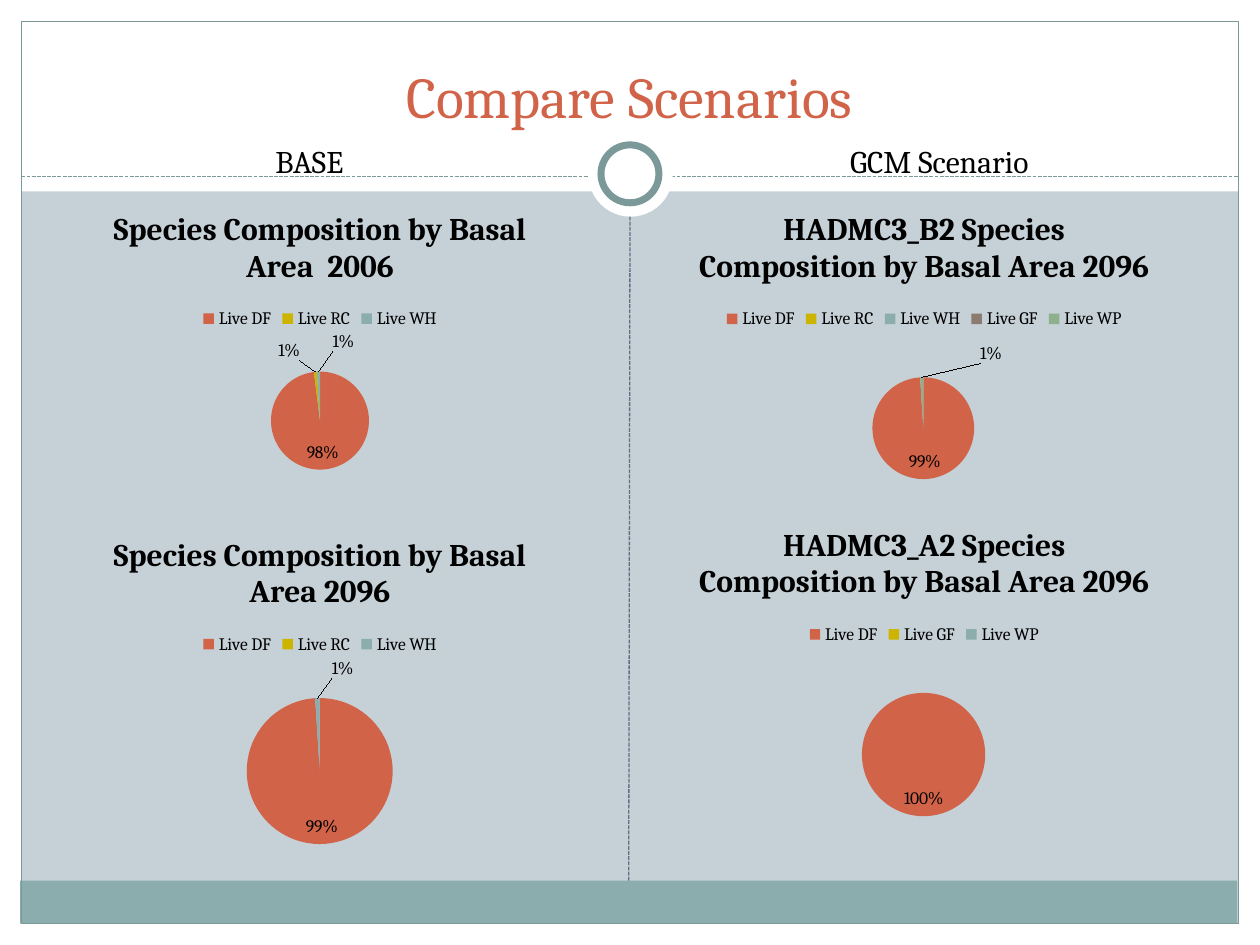
from lxml import etree
from pptx import Presentation
from pptx.chart.data import CategoryChartData
from pptx.dml.color import RGBColor
from pptx.enum.chart import XL_CHART_TYPE, XL_LABEL_POSITION, XL_LEGEND_POSITION
from pptx.enum.dml import MSO_LINE
from pptx.enum.shapes import MSO_CONNECTOR, MSO_SHAPE
from pptx.enum.text import MSO_ANCHOR, PP_ALIGN
from pptx.oxml import parse_xml
from pptx.oxml.ns import nsdecls, qn
from pptx.util import Inches, Pt

RECT, OVAL = MSO_SHAPE.RECTANGLE, MSO_SHAPE.OVAL
STRAIGHT, DASH = MSO_CONNECTOR.STRAIGHT, MSO_LINE.SQUARE_DOT
PIE, LEGEND_TOP = XL_CHART_TYPE.PIE, XL_LEGEND_POSITION.TOP
INSIDE, OUTSIDE = XL_LABEL_POSITION.INSIDE_END, XL_LABEL_POSITION.OUTSIDE_END

WHITE = RGBColor(0xFF, 0xFF, 0xFF)
BLACK = RGBColor(0, 0, 0)
PALE_BLUE = RGBColor(0xC5, 0xD1, 0xD7)
TEAL = RGBColor(0x8C, 0xAD, 0xAE)
DARK_TEAL = RGBColor(0x7C, 0x99, 0x9A)
SLATE = RGBColor(0x64, 0x6B, 0x86)
RUST = RGBColor(0xD1, 0x63, 0x49)
GOLD = RGBColor(0xCC, 0xB4, 0x00)
BROWN = RGBColor(0x8C, 0x7B, 0x70)
GREEN = RGBColor(0x8F, 0xB0, 0x8C)
SLICE_COLORS = [RUST, GOLD, TEAL, BROWN, GREEN]
FONT = "Cambria"

prs = Presentation()
prs.slide_width, prs.slide_height = Inches(10), Inches(7.5)
slide = prs.slides.add_slide(prs.slide_layouts[6])
slide.background.fill.solid()
slide.background.fill.fore_color.rgb = PALE_BLUE


def add_panel(kind, box, fill=None, line=None, width=0.75):
    panel = slide.shapes.add_shape(kind, *map(Inches, box))
    panel.shadow.inherit = False
    if fill is None:
        panel.fill.background()
    else:
        panel.fill.solid()
        panel.fill.fore_color.rgb = fill
    if line is None:
        panel.line.fill.background()
    else:
        panel.line.color.rgb = line
        panel.line.width = Pt(width)
    return panel


def manual_layout(x, y, extra=""):
    """Chart layout XML; x and y are fractions of the chart's size."""
    return parse_xml(
        f'<c:layout {nsdecls("c")}><c:manualLayout>{extra}'
        f'<c:x val="{x:.3f}"/><c:y val="{y:.3f}"/></c:manualLayout></c:layout>')


# Frame
for margin in [(0, 7.33, 10, 0.17), (0, 0, 10, 1.52),
               (0, 0, 0.17, 7.5), (9.83, 0, 0.17, 7.5)]:
    add_panel(RECT, margin, WHITE)
footer = add_panel(RECT, (0.16, 6.99, 9.66, 0.34), TEAL)
add_panel(RECT, (0.17, 0.17, 9.66, 7.16), line=DARK_TEAL)

# Dividers, with the ring between them
header_rule = slide.shapes.add_connector(
    STRAIGHT, Inches(0.17), Inches(1.4), Inches(9.83), Inches(1.4))
add_panel(OVAL, (4.67, 1.05, 0.67, 0.67), WHITE)
add_panel(OVAL, (4.77, 1.15, 0.46, 0.46), WHITE, DARK_TEAL, 4)
column_rule = slide.shapes.add_connector(
    STRAIGHT, Inches(4.99), Inches(6.99), Inches(5), Inches(1.72))
column_rule.begin_connect(footer, 0)
for rule, color in [(header_rule, DARK_TEAL), (column_rule, SLATE)]:
    rule.line.color.rgb = color
    rule.line.width = Pt(0.75)
    rule.line.dash_style = DASH
    etree.SubElement(rule._element.spPr, qn("a:effectLst"))

# Title and column headings
for text, box, size, color, anchor in [
    ("Compare Scenarios", (0.33, 0.25, 9.33, 0.83), 33, RUST, MSO_ANCHOR.BOTTOM),
    ("BASE", (0.83, 1.08, 3.25, 0.4), 18, BLACK, MSO_ANCHOR.TOP),
    ("GCM Scenario", (5.83, 1.08, 3.25, 0.4), 18, BLACK, MSO_ANCHOR.TOP),
]:
    frame = slide.shapes.add_textbox(*map(Inches, box)).text_frame
    frame.word_wrap = True
    frame.vertical_anchor = anchor
    paragraph = frame.paragraphs[0]
    paragraph.text = text
    paragraph.alignment = PP_ALIGN.CENTER
    paragraph.font.size = Pt(size)
    paragraph.font.name = FONT
    paragraph.font.color.rgb = color

# Title, box, {species: percent}, pie centre and diameter, label shifts (inches)
PIES = [
    ("Species Composition by Basal Area  2006", (0.33, 1.5, 4.42, 2.58),
     {"Live DF": 98, "Live RC": 1, "Live WH": 1},
     (2.54, 3.34, 0.78), {1: (-0.12, -0.03), 2: (0.2, -0.1)}),
    ("Species Composition by Basal Area 2096", (0.25, 4.08, 4.58, 2.75),
     {"Live DF": 99, "Live RC": 0, "Live WH": 1},
     (2.54, 6.12, 1.16), {1: (-0.05, -0.03), 2: (0.2, -0.1)}),
    ("HADMC3_B2 Species Composition by Basal Area 2096", (5, 1.5, 4.67, 2.67),
     {"Live DF": 99, "Live RC": 0, "Live WH": 0, "Live GF": 0, "Live WP": 1},
     (7.33, 3.4, 0.81),
     {1: (-0.2, -0.05), 2: (-0.2, -0.05), 3: (-0.2, -0.05), 4: (0.55, -0.05)}),
    ("HADMC3_A2 Species Composition by Basal Area 2096", (5, 4, 4.67, 2.83),
     {"Live DF": 100, "Live GF": 0, "Live WP": 0},
     (7.33, 5.99, 0.98), {1: (-0.02, -0.04), 2: (0.26, -0.04)}),
]
for title, box, shares, (center_x, center_y, diameter), shifts in PIES:
    left, top, width, height = box
    data = CategoryChartData()
    data.categories = list(shares)
    data.add_series("Series 1", list(shares.values()))
    chart = slide.shapes.add_chart(PIE, *map(Inches, box), data).chart
    chart.font.name = FONT
    chart.font.size = Pt(10)
    chart.font.color.rgb = BLACK

    chart.has_title = True
    heading = chart.chart_title.text_frame.paragraphs[0]
    heading.text = title
    heading.font.name = FONT
    heading.font.size = Pt(18)
    heading.font.bold = True
    heading.font.color.rgb = BLACK
    chart.has_legend = True
    chart.legend.position = LEGEND_TOP
    chart.legend.include_in_layout = False

    plot = chart.plots[0]
    plot.vary_by_categories = True
    series = plot.series[0]
    labels = series.data_labels
    labels.show_value = False
    labels.show_percentage = True
    labels.number_format = "0%"
    labels.number_format_is_linked = False
    labels.position = INSIDE
    for index, color in zip(range(len(shares)), SLICE_COLORS):
        fill = series.points[index].format.fill
        fill.solid()
        fill.fore_color.rgb = color
    for index, (dx, dy) in shifts.items():
        series.points[index].data_label.position = OUTSIDE
    for label in chart._chartSpace.iter(qn("c:dLbl")):
        dx, dy = shifts[int(label.find(qn("c:idx")).get("val"))]
        label.find(qn("c:showVal")).set("val", "0")
        label.find(qn("c:showPercent")).set("val", "1")
        label.insert(1, manual_layout(dx / width, dy / height))

    plot_area = chart._chartSpace.find(".//" + qn("c:plotArea"))
    for old_layout in plot_area.findall(qn("c:layout")):
        plot_area.remove(old_layout)
    pie_layout = manual_layout(
        (center_x - diameter / 2 - left) / width,
        (center_y - diameter / 2 - top) / height,
        '<c:layoutTarget val="inner"/><c:xMode val="edge"/><c:yMode val="edge"/>')
    for side, fraction in [("c:w", diameter / width), ("c:h", diameter / height)]:
        etree.SubElement(pie_layout[0], qn(side)).set("val", f"{fraction:.3f}")
    plot_area.insert(0, pie_layout)

prs.save("out.pptx")
